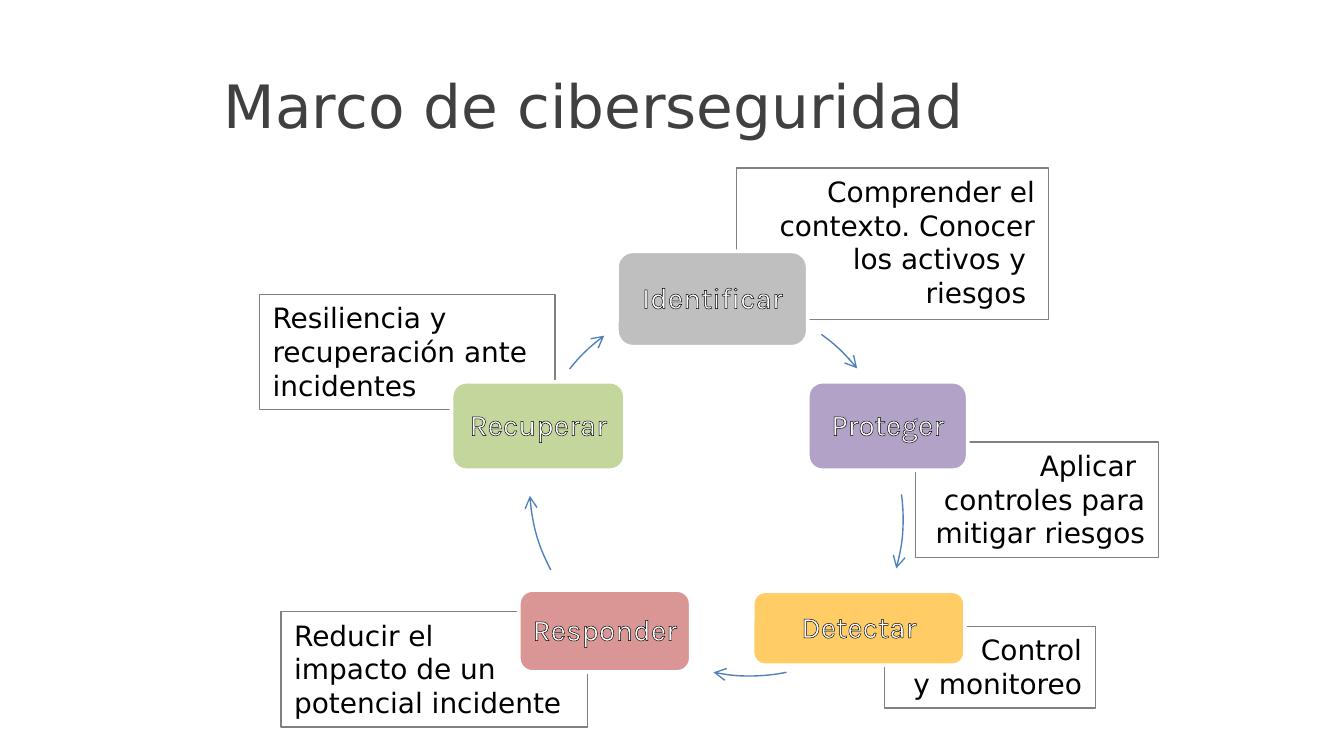
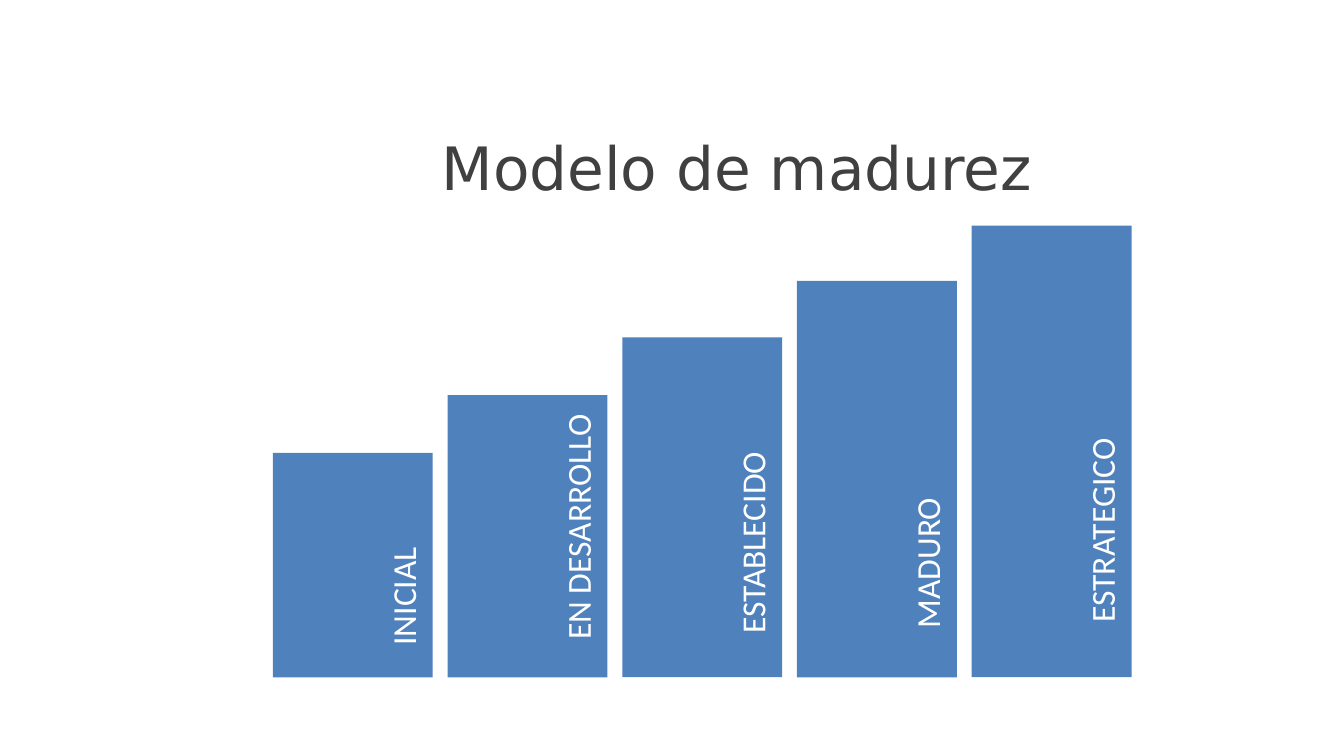
from math import atan2, degrees

from lxml import etree
from pptx import Presentation
from pptx.dml.color import RGBColor
from pptx.enum.shapes import MSO_SHAPE
from pptx.enum.text import MSO_ANCHOR, MSO_AUTO_SIZE, PP_ALIGN
from pptx.oxml import parse_xml
from pptx.oxml.ns import nsdecls, qn
from pptx.util import Inches, Pt

LEFT, CENTER, RIGHT = PP_ALIGN.LEFT, PP_ALIGN.CENTER, PP_ALIGN.RIGHT
MIDDLE, TOP = MSO_ANCHOR.MIDDLE, MSO_ANCHOR.TOP
RECTANGLE, ROUNDED, ARC = MSO_SHAPE.RECTANGLE, MSO_SHAPE.ROUNDED_RECTANGLE, MSO_SHAPE.ARC

BLUE = "4F81BD"
WHITE = "FFFFFF"
TITLE_STYLE = {"name": "DejaVu Sans", "size": Pt(32), "color": "404040"}
CALLOUT_STYLE = {"name": "DejaVu Sans", "size": Pt(15), "color": "000000"}
STAGE_STYLE = {"name": "Karla", "size": Pt(16), "color": WHITE}
LEVEL_STYLE = {"name": "Calibri", "size": Pt(18), "color": WHITE}


def write(box, text, style, align, anchor, insets=(0.1, 0.05, 0.1, 0.05), spacing=None):
    """Fill a box with text, one paragraph per line, in a single style."""
    frame = box.text_frame
    frame.text = text
    frame.word_wrap = True
    frame.vertical_anchor = anchor
    for side, inset in zip(("left", "top", "right", "bottom"), insets):
        setattr(frame, f"margin_{side}", Inches(inset))
    for para in frame.paragraphs:
        para.alignment = align
        para.line_spacing = spacing
        for span in para.runs:
            for name, value in style.items():
                if name == "color":
                    span.font.color.rgb = RGBColor.from_string(value)
                else:
                    setattr(span.font, name, value)


def add_box(page, kind, place, fill=None, line=None, width=0.75):
    box = page.shapes.add_shape(kind, *map(Inches, place))
    box.shadow.inherit = False
    if fill:
        box.fill.solid()
        box.fill.fore_color.rgb = RGBColor.from_string(fill)
    else:
        box.fill.background()
    if line:
        box.line.color.rgb = RGBColor.from_string(line)
        box.line.width = Pt(width)
    else:
        box.line.fill.background()
    return box


deck = Presentation()
deck.slide_width = Inches(10)
deck.slide_height = deck.slide_width * 9 // 16

titles = [
    ("Marco de ciberseguridad", (1.03, 0.15, 6.78, 1.25)),
    ("Modelo de madurez", (1.38, 0.77, 8.21, 0.94)),
]
pages = []
for text, place in titles:
    page = deck.slides.add_slide(deck.slide_layouts[5])
    title = page.shapes.title
    title.left, title.top, title.width, title.height = map(Inches, place)
    write(title, text, TITLE_STYLE, CENTER, MIDDLE)
    pages.append(page)
cycle_page, maturity_page = pages

# Callouts behind the cycle
callouts = [
    ("Resiliencia y recuperación ante incidentes", (1.93, 2.19, 2.2, 0.86), LEFT),
    ("Reducir el\nimpacto de un potencial incidente", (2.09, 4.55, 2.28, 0.86), LEFT),
    ("Comprender el contexto. Conocer los activos y \nriesgos ", (5.48, 1.25, 2.32, 1.13), RIGHT),
    ("Aplicar \ncontroles para mitigar riesgos", (6.81, 3.29, 1.81, 0.86), RIGHT),
    ("Control\ny monitoreo", (6.58, 4.66, 1.57, 0.61), RIGHT),
]
for text, place, align in callouts:
    box = add_box(cycle_page, RECTANGLE, place, line="808080")
    write(box, text, CALLOUT_STYLE, align, TOP)
    box.text_frame.auto_size = MSO_AUTO_SIZE.SHAPE_TO_FIT_TEXT

# Stages of the cycle, with outlined lettering
stages = [
    ("Identificar", (4.59, 1.87, 1.42, 0.71), "BFBFBF"),
    ("Proteger", (6.01, 2.84, 1.19, 0.66), "B3A2C7"),
    ("Detectar", (5.6, 4.4, 1.58, 0.55), "FFCC66"),
    ("Responder", (3.86, 4.39, 1.28, 0.61), "D99694"),
    ("Recuperar", (3.36, 2.84, 1.29, 0.66), "C3D69B"),
]
for text, place, fill in stages:
    box = add_box(cycle_page, ROUNDED, place, fill, WHITE, 2)
    write(box, text, STAGE_STYLE, CENTER, MIDDLE, (0.05,) * 4, 0.9)
    outline = parse_xml(
        f'<a:ln {nsdecls("a")} w="9525"><a:solidFill><a:srgbClr val="000000"/></a:solidFill></a:ln>'
    )
    box.text_frame.paragraphs[0].runs[0].font._element.insert(0, outline)

# Arrows: circle corner, start point, end point
DIAMETER = 2.74
arrows = [
    ((3.94, 2.23), (6.11, 2.49), (6.38, 2.74)),
    ((3.98, 2.49), (6.7, 3.68), (6.67, 4.23)),
    ((4.21, 2.29), (5.85, 4.99), (5.31, 5)),
    ((3.94, 2.23), (4.1, 4.24), (3.94, 3.69)),
    ((3.94, 2.23), (4.23, 2.74), (4.49, 2.49)),
]
for (left, top), *ends in arrows:
    arc = add_box(cycle_page, ARC, (left, top, DIAMETER, DIAMETER), line=BLUE)
    for index, (x, y) in enumerate(ends):
        angle = degrees(atan2(y - top - DIAMETER / 2, x - left - DIAMETER / 2)) % 360
        arc.adjustments[index] = angle * 0.6  # 60000 units a degree, scaled by 100000
    etree.SubElement(arc.line._get_or_add_ln(), qn("a:tailEnd"), type="arrow")

# Maturity steps, with labels turned to read upwards
BAR_LEFT, BAR_STEP, BAR_WIDTH, BASE = 2.03, 1.3, 1.19, 5.04
LABEL_HEIGHT = 0.31
levels = [
    ("INICIAL", 1.67),
    ("EN DESARROLLO", 2.1),
    ("ESTABLECIDO", 2.53),
    ("MADURO", 2.95),
    ("ESTRATEGICO", 3.36),
]
for index, (text, height) in enumerate(levels):
    left, top = BAR_LEFT + index * BAR_STEP, BASE - height
    add_box(maturity_page, RECTANGLE, (left, top, BAR_WIDTH, height), BLUE)
    length = 0.9 * height
    label = maturity_page.shapes.add_textbox(
        Inches(left + 1 - length / 2), Inches(top + length / 2 - LABEL_HEIGHT / 2),
        Inches(length), Inches(LABEL_HEIGHT))
    label.rotation = 270
    write(label, text, LEVEL_STYLE, LEFT, MIDDLE, (0.07, 0, 0.11, 0.03), 0.9)

deck.save("out.pptx")
